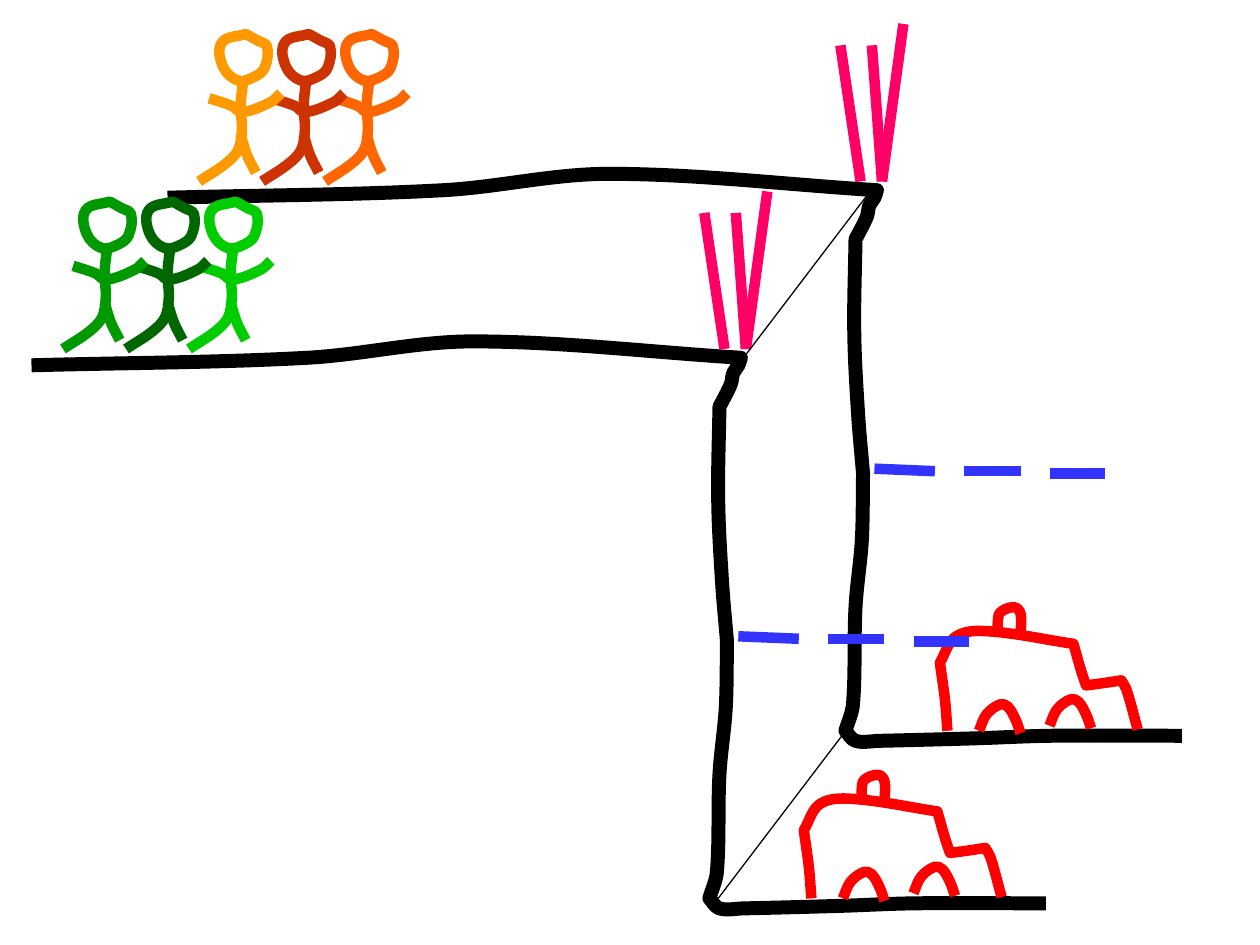
import math

import pptx
import pptx.dml.color
import pptx.enum.shapes
import pptx.oxml.ns
import pptx.util
from lxml import etree

PX = 9144
BLACK, RED, BLUE, PINK = "000000", "FF0000", "3333FF", "FF0066"
THICK, MEDIUM, THIN = 8, 6, 0.75
qn = pptx.oxml.ns.qn


def outline(sp, color, width):
    sp.line.color.rgb = pptx.dml.color.RGBColor.from_string(color)
    sp.line.width = pptx.util.Pt(width)
    etree.SubElement(sp._element.spPr, qn("a:effectLst"))


def draw(shapes, runs, origin, color, width):
    controls = []
    last = []
    for run in runs:
        knots = last + run
        last = knots[-1:]
        for i in range(len(knots) - 1):
            a, b = knots[i], knots[i + 1]
            before, after = knots[max(i - 1, 0)], knots[min(i + 2, len(knots) - 1)]
            reach = math.dist(a, b) / 3
            leave = reach / math.dist(before, b)
            arrive = reach / math.dist(a, after)
            controls += [
                (a[0] + (b[0] - before[0]) * leave, a[1] + (b[1] - before[1]) * leave),
                (b[0] - (after[0] - a[0]) * arrive, b[1] - (after[1] - a[1]) * arrive),
                b,
            ]
    start, *rest = [((x + origin[0]) * PX, (y + origin[1]) * PX)
                    for x, y in [runs[0][0]] + controls]
    builder = shapes.build_freeform(*start, scale=1.0)
    builder.add_line_segments(rest, close=False)
    sp = builder.convert_to_shape()
    geometry = sp._element.xpath(".//a:path")[0]
    steps = geometry.findall(qn("a:lnTo"))
    for i in range(0, len(steps), 3):
        bezier = etree.SubElement(geometry, qn("a:cubicBezTo"))
        for step in steps[i:i + 3]:
            bezier.append(step[0])
            geometry.remove(step)
    sp.fill.background()
    outline(sp, color, width)


cliff = {
    "plateau": [(-563, 6), (-344, 0), (-213, -13), (0, 0)],
    "lip": [(-2, 6), (-6, 12), (-8, 21), (-17, 39)],
    "upper face": [(-18, 113), (-15, 177), (-11, 225)],
    "lower face": [(-12, 278), (-17, 331), (-19, 408), (-25, 429)],
    "road": [(-17, 437), (2, 437), (79, 435), (138, 433), (242, 433)],
}
car_body = {
    "rear": [(0, 0), (-2, -25), (-6, -54)],
    "roof": [(7, -75), (32, -79), (100, -69)],
    "windscreen": [(106, -48), (110, -36)],
    "bonnet": [(125, -38), (138, -40)],
    "nose": [(142, -33), (151, -1)],
}
siren = [(0, 0), (0, -8), (2, -15), (13, -19), (18, -14), (18, 2)]
wheel = [(0, 0), (6, -13), (17, -21), (23, -19), (29, -9), (33, 2)]
person = {
    "head": [(2, -37), (-17, -30), (-16, -11), (-4, 0), (9, -3),
             (17, -10), (19, -27), (11, -32), (2, -37)],
    "body and back leg": [(0, 0), (-2, 20), (-1, 39), (-4, 55), (-14, 66), (-35, 80)],
    "front leg": [(-2, 43), (3, 59), (10, 73)],
    "arms": [(-27, 14), (-9, 20), (-1, 25), (22, 17), (30, 10)],
}
sticks = [(4, -7, -4, -115), (4, -7, 21, -132), (-13, -7, -29, -115)]
dashes = [(-2, 221, 46, 223), (69, 223, 114, 223), (137, 225, 181, 225)]

car_at = (56, 429)
siren_at = (40, -79)
wheels_at = [(25, 0), (81, -4)]
crowd_at = (-403, -87)
person_step = -50

back_lip, front_lip = (696, 151), (588, 284)
scenes = [
    (back_lip, ["FF6600", "CC3300", "FF9900"]),
    (front_lip, ["00CC00", "006600", "009900"]),
]

prs = pptx.Presentation()
prs.slide_width = 1000 * PX
prs.slide_height = 750 * PX
s = prs.slides.add_slide(prs.slide_layouts[6])
straight = pptx.enum.shapes.MSO_CONNECTOR.STRAIGHT

for (lip_x, lip_y), crowd in scenes:
    scene = s.shapes.add_group_shape().shapes
    draw(scene, list(cliff.values()), (lip_x, lip_y), BLACK, THICK)

    car_x, car_y = lip_x + car_at[0], lip_y + car_at[1]
    draw(scene, list(car_body.values()), (car_x, car_y), RED, MEDIUM)
    for part, (dx, dy) in [(siren, siren_at)] + [(wheel, at) for at in wheels_at]:
        draw(scene, [part], (car_x + dx, car_y + dy), RED, MEDIUM)

    for lines, color in ((dashes, BLUE), (sticks, PINK)):
        for x1, y1, x2, y2 in lines:
            sp = scene.add_connector(straight, (lip_x + x1) * PX, (lip_y + y1) * PX,
                                     (lip_x + x2) * PX, (lip_y + y2) * PX)
            outline(sp, color, MEDIUM)

    for i, color in enumerate(crowd):
        neck = (lip_x + crowd_at[0] + i * person_step, lip_y + crowd_at[1])
        for limb in person.values():
            draw(scene, [limb], neck, color, MEDIUM)

for x, back_y, front_y in ((-4, -1, 8), (-21, 424, 433)):
    sp = s.shapes.add_connector(
        straight, (back_lip[0] + x) * PX, (back_lip[1] + back_y) * PX,
        (front_lip[0] + x) * PX, (front_lip[1] + front_y) * PX)
    outline(sp, BLACK, THIN)

prs.save("out.pptx")
